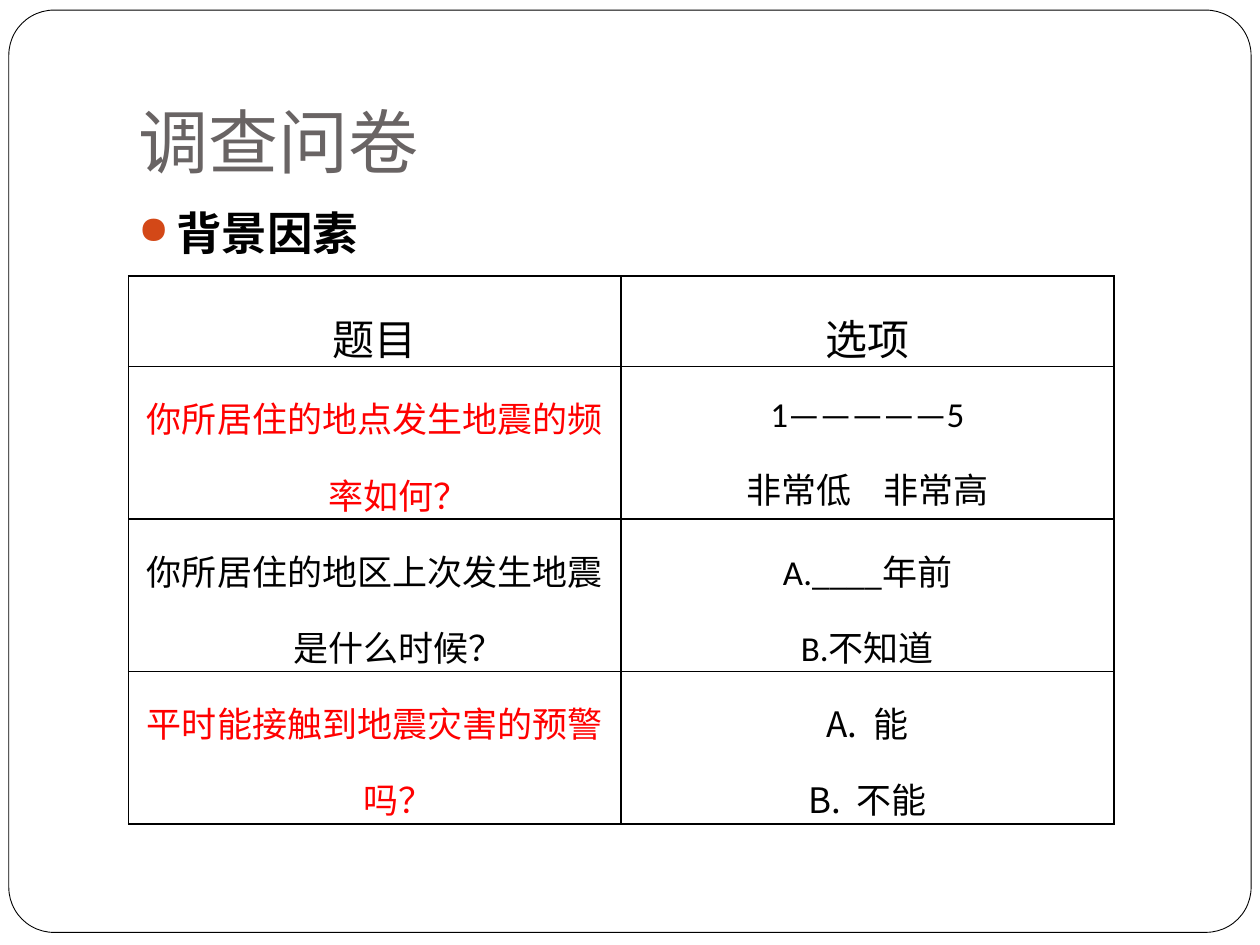
from dataclasses import dataclass

import pptx
import pptx.dml.color
import pptx.enum.shapes
import pptx.enum.text
import pptx.oxml
import pptx.oxml.ns
import pptx.util
from pptx.util import Inches


@dataclass(frozen=True)
class Theme:
    white: str = "FFFFFF"
    black: str = "000000"
    red: str = "FF0000"
    title_gray: str = "696464"
    bullet_orange: str = "D34817"
    title_font: str = "Lato"
    heading_font: str = "Times New Roman"
    table_font: str = "Calibri"
    title_size: float = 40
    heading_size: float = 26
    header_size: float = 24
    cell_size: float = 20
    frame_width: float = 0.5
    border_width: float = 1
    scale_gap: float = 13.6


@dataclass(frozen=True)
class Question:
    text: str
    options: tuple[str, ...]
    color: str
    lettered: bool = False


THEME = Theme()
HEADERS = ("题目", "选项")
QUESTIONS = (
    Question("你所居住的地点发生地震的频率如何？", ("1—————5", "非常低 非常高"), THEME.red),
    Question("你所居住的地区上次发生地震是什么时候？", ("A.____年前", "B.不知道"), THEME.black),
    Question("平时能接触到地震灾害的预警吗？", ("能", "不能"), THEME.red, lettered=True),
)


def rgb(color: str) -> pptx.dml.color.RGBColor:
    return pptx.dml.color.RGBColor.from_string(color)


def style_font(paragraph, name: str, size: float, color: str, bold: bool = False) -> None:
    paragraph.font.name = name
    paragraph.font.size = pptx.util.Pt(size)
    paragraph.font.color.rgb = rgb(color)
    paragraph.font.bold = bold


def add_properties(paragraph, indent: float, *elements: str) -> None:
    properties = paragraph._p.get_or_add_pPr()
    properties.set("marL", str(Inches(indent)))
    properties.set("indent", str(Inches(-indent)))
    namespace = pptx.oxml.ns.nsdecls("a")
    position = len(properties.findall(pptx.oxml.ns.qn("a:lnSpc")))
    position += len(properties.findall(pptx.oxml.ns.qn("a:spcBef")))
    for offset, element in enumerate(elements):
        node = pptx.oxml.parse_xml(element.replace("/>", f" {namespace}/>", 1) if element.endswith("/>")
                                   and element.count("<") == 1
                                   else element.replace(">", f" {namespace}>", 1))
        properties.insert(position + offset, node)


def add_text(slide, text: str, left: float, top: float, width: float, height: float):
    frame = slide.shapes.add_textbox(Inches(left), Inches(top), Inches(width), Inches(height)).text_frame
    frame.word_wrap = True
    frame.text = text
    return frame


def add_frame(slide) -> None:
    shape = slide.shapes.add_shape(
        pptx.enum.shapes.MSO_SHAPE.ROUNDED_RECTANGLE,
        Inches(0.07), Inches(0.08), Inches(9.86), Inches(7.32))
    shape.adjustments[0] = 0.049
    shape.shadow.inherit = False
    shape.fill.solid()
    shape.fill.fore_color.rgb = rgb(THEME.white)
    shape.line.color.rgb = rgb(THEME.black)
    shape.line.width = pptx.util.Pt(THEME.frame_width)


def add_headings(slide) -> None:
    title = add_text(slide, "调查问卷", 1, 0.3, 8.5, 1.25)
    title.vertical_anchor = pptx.enum.text.MSO_ANCHOR.BOTTOM
    title.margin_bottom = Inches(0.1)
    style_font(title.paragraphs[0], THEME.title_font, THEME.title_size, THEME.title_gray)

    heading = add_text(slide, "背景因素", 1, 1.58, 8.5, 0.6).paragraphs[0]
    style_font(heading, THEME.heading_font, THEME.heading_size, THEME.black, bold=True)
    heading.space_before = pptx.util.Pt(5.8)
    add_properties(
        heading, 0.3,
        f'<a:buClr><a:srgbClr val="{THEME.bullet_orange}"/></a:buClr>',
        '<a:buSzPct val="85000"/>',
        '<a:buChar char="●"/>')


def style_cell(cell) -> None:
    cell.vertical_anchor = pptx.enum.text.MSO_ANCHOR.MIDDLE
    cell.margin_left = cell.margin_right = Inches(0.07)
    cell.margin_top = cell.margin_bottom = 0
    properties = cell._tc.get_or_add_tcPr()
    for side in ("lnL", "lnR", "lnT", "lnB"):
        properties.append(pptx.oxml.parse_xml(
            f'<a:{side} {pptx.oxml.ns.nsdecls("a")} w="{pptx.util.Pt(THEME.border_width)}">'
            f'<a:solidFill><a:srgbClr val="{THEME.black}"/></a:solidFill></a:{side}>'))
    cell.fill.background()


def add_spaced_words(paragraph, text: str) -> None:
    first, gap, last = text.partition(" ")
    paragraph.add_run().text = first
    if gap:
        space = paragraph.add_run()
        space.text = gap
        space.font._element.set("spc", str(round(THEME.scale_gap * 100)))
        paragraph.add_run().text = last


def fill_cell(cell, lines: tuple[str, ...], size: float, color: str,
              hanging: bool = False, lettered: bool = False) -> None:
    style_cell(cell)
    frame = cell.text_frame
    for index, line in enumerate(lines):
        paragraph = frame.add_paragraph() if index else frame.paragraphs[0]
        add_spaced_words(paragraph, line)
        paragraph.alignment = pptx.enum.text.PP_ALIGN.CENTER
        paragraph.line_spacing = 1.5
        style_font(paragraph, THEME.table_font, size, color)
        if lettered:
            add_properties(paragraph, 0.38, '<a:buAutoNum type="alphaUcPeriod"/>')
        elif hanging:
            add_properties(paragraph, 0.38)


def add_questionnaire(slide) -> None:
    heights = [0.72] + [1.21] * len(QUESTIONS)
    table = slide.shapes.add_table(
        len(heights), len(HEADERS), Inches(1.02), Inches(2.19),
        Inches(7.82), Inches(sum(heights))).table
    table.first_row = False
    table.horz_banding = False
    for row, height in zip(table.rows, heights):
        row.height = Inches(height)
    for column, header in enumerate(HEADERS):
        fill_cell(table.cell(0, column), (header,), THEME.header_size, THEME.black)
    for row, question in enumerate(QUESTIONS, start=1):
        fill_cell(table.cell(row, 0), (question.text,), THEME.cell_size, question.color, hanging=True)
        fill_cell(table.cell(row, 1), question.options, THEME.cell_size, THEME.black,
                  lettered=question.lettered)


def main() -> None:
    presentation = pptx.Presentation()
    presentation.slide_width = Inches(10)
    presentation.slide_height = Inches(7.5)
    slide = presentation.slides.add_slide(presentation.slide_layouts[6])
    add_frame(slide)
    add_headings(slide)
    add_questionnaire(slide)
    presentation.save("out.pptx")


if __name__ == "__main__":
    main()
